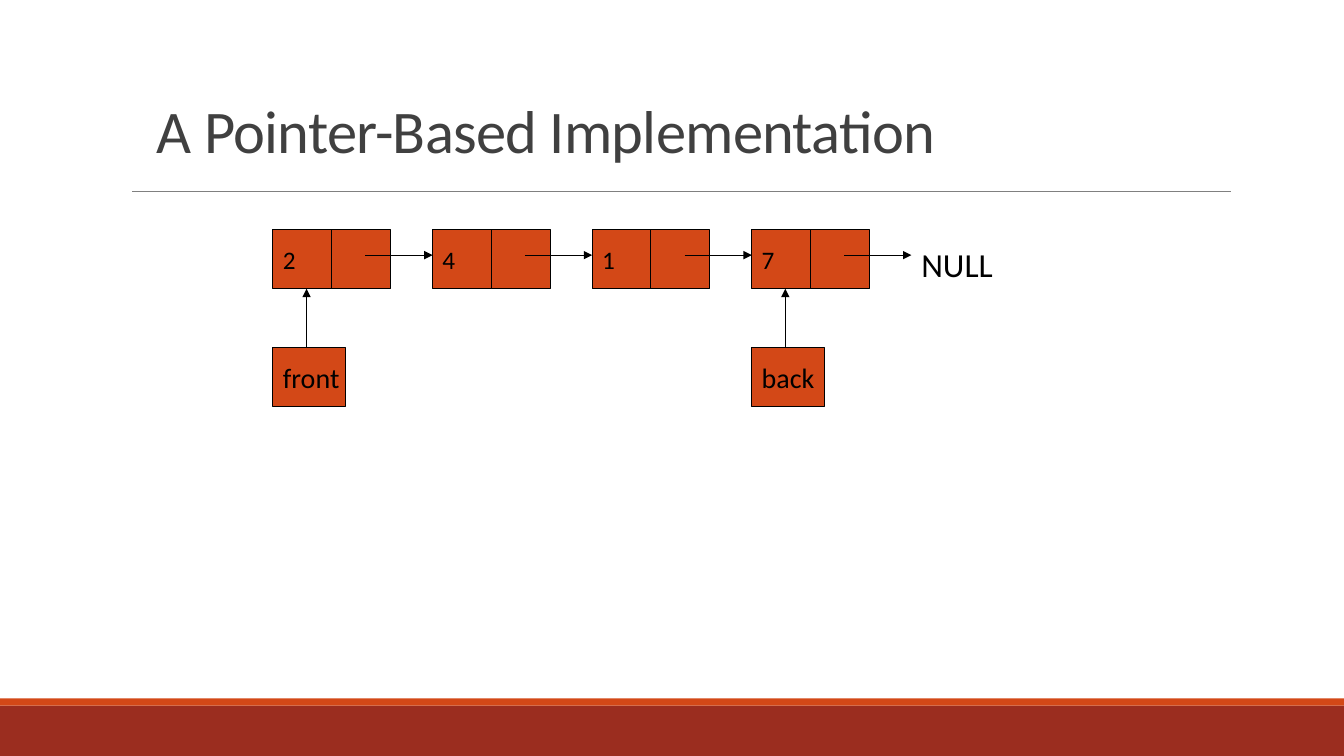
"""Build a slide showing a linked queue with front and back pointers."""
from dataclasses import dataclass

from lxml.etree import SubElement
from pptx import Presentation
from pptx.dml.color import RGBColor
from pptx.enum.shapes import MSO_CONNECTOR, MSO_SHAPE
from pptx.enum.text import MSO_ANCHOR, MSO_AUTO_SIZE, PP_ALIGN
from pptx.oxml.ns import qn
from pptx.shapes.autoshape import Shape
from pptx.slide import Slide
from pptx.util import Emu, Pt

COLORS = {
    "band": "9B2D1F",
    "accent": "D34817",
    "rule": "808080",
    "title": "404040",
    "ink": "000000",
}
FONT = "Calibri"
CELL = 56
PITCH = 152
LEFT = 260
NODE_TOP = 219
LINK_Y = 243
POINTER_TOP = 331
POINTER_WIDTH = 69


@dataclass(frozen=True)
class Node:
    value: str
    index: int

    @property
    def left(self) -> int:
        return LEFT + self.index * PITCH


@dataclass(frozen=True)
class Pointer:
    label: str
    target: Node


NODES = [Node(value, i) for i, value in enumerate("2417")]
POINTERS = [Pointer("front", NODES[0]), Pointer("back", NODES[-1])]


def px(n: int) -> Emu:
    return Emu(n * 9525)


def color(name: str) -> RGBColor:
    return RGBColor.from_string(COLORS[name])


def write(sp: Shape, text: str, *, size: float, ink: str = "ink",
          anchor: MSO_ANCHOR = MSO_ANCHOR.MIDDLE, wrap: bool = False,
          spacing: float | None = None, tracking: int | None = None) -> None:
    tf = sp.text_frame
    tf.word_wrap = wrap
    tf.vertical_anchor = anchor
    p = tf.paragraphs[0]
    p.alignment = PP_ALIGN.LEFT
    p.line_spacing = spacing
    r = p.add_run()
    r.text = text
    r.font.name = FONT
    r.font.size = Pt(size)
    r.font.color.rgb = color(ink)
    if tracking is not None:
        r.font._element.set("spc", str(tracking))


def add_box(s: Slide, x: int, y: int, w: int, h: int, fill: str = "accent",
            outline: bool = True) -> Shape:
    sp = s.shapes.add_shape(MSO_SHAPE.RECTANGLE, px(x), px(y), px(w), px(h))
    sp.shadow.inherit = False
    sp.fill.solid()
    sp.fill.fore_color.rgb = color(fill)
    if outline:
        sp.line.color.rgb = color("ink")
        sp.line.width = Pt(0.75)
    else:
        sp.line.fill.background()
    return sp


def add_line(s: Slide, x1: int, y1: int, x2: int, y2: int, ink: str = "ink",
             width: float = 0.75, arrow: bool = True) -> None:
    cx = s.shapes.add_connector(MSO_CONNECTOR.STRAIGHT, px(x1), px(y1), px(x2), px(y2))
    cx.line.color.rgb = color(ink)
    cx.line.width = Pt(width)
    if arrow:
        SubElement(cx.line._get_or_add_ln(), qn("a:tailEnd"), type="triangle")
    SubElement(cx._element.spPr, qn("a:effectLst"))


def add_node(s: Slide, node: Node) -> None:
    write(add_box(s, node.left, NODE_TOP, CELL, CELL), node.value, size=18)
    add_box(s, node.left + CELL, NODE_TOP, CELL, CELL)
    add_line(s, node.left + 88, LINK_Y, node.left + PITCH, LINK_Y)


def add_pointer(s: Slide, pointer: Pointer) -> None:
    x = pointer.target.left
    write(add_box(s, x, POINTER_TOP, POINTER_WIDTH, CELL), pointer.label, size=20)
    add_line(s, x + 32, POINTER_TOP, x + 32, NODE_TOP + CELL)


def main() -> None:
    prs = Presentation()
    prs.slide_width, prs.slide_height = px(1280), px(720)
    s = prs.slides.add_slide(prs.slide_layouts[6])

    add_box(s, 0, 672, 1280, 48, "band", outline=False)
    add_box(s, 0, 665, 1280, 7, outline=False)
    add_line(s, 126, 182, 1172, 182, "rule", 0.5, arrow=False)
    title = s.shapes.add_textbox(px(140), px(43), px(816), px(120))
    write(title, "A Pointer-Based Implementation", size=43.2, ink="title",
          anchor=MSO_ANCHOR.BOTTOM, wrap=True, spacing=0.85, tracking=-50)

    for node in NODES:
        add_node(s, node)
    for pointer in POINTERS:
        add_pointer(s, pointer)

    null = s.shapes.add_textbox(px(NODES[-1].left + PITCH), px(228), px(88), px(48))
    write(null, "NULL", size=24, anchor=MSO_ANCHOR.TOP)
    null.text_frame.auto_size = MSO_AUTO_SIZE.SHAPE_TO_FIT_TEXT
    prs.save("out.pptx")


if __name__ == "__main__":
    main()
